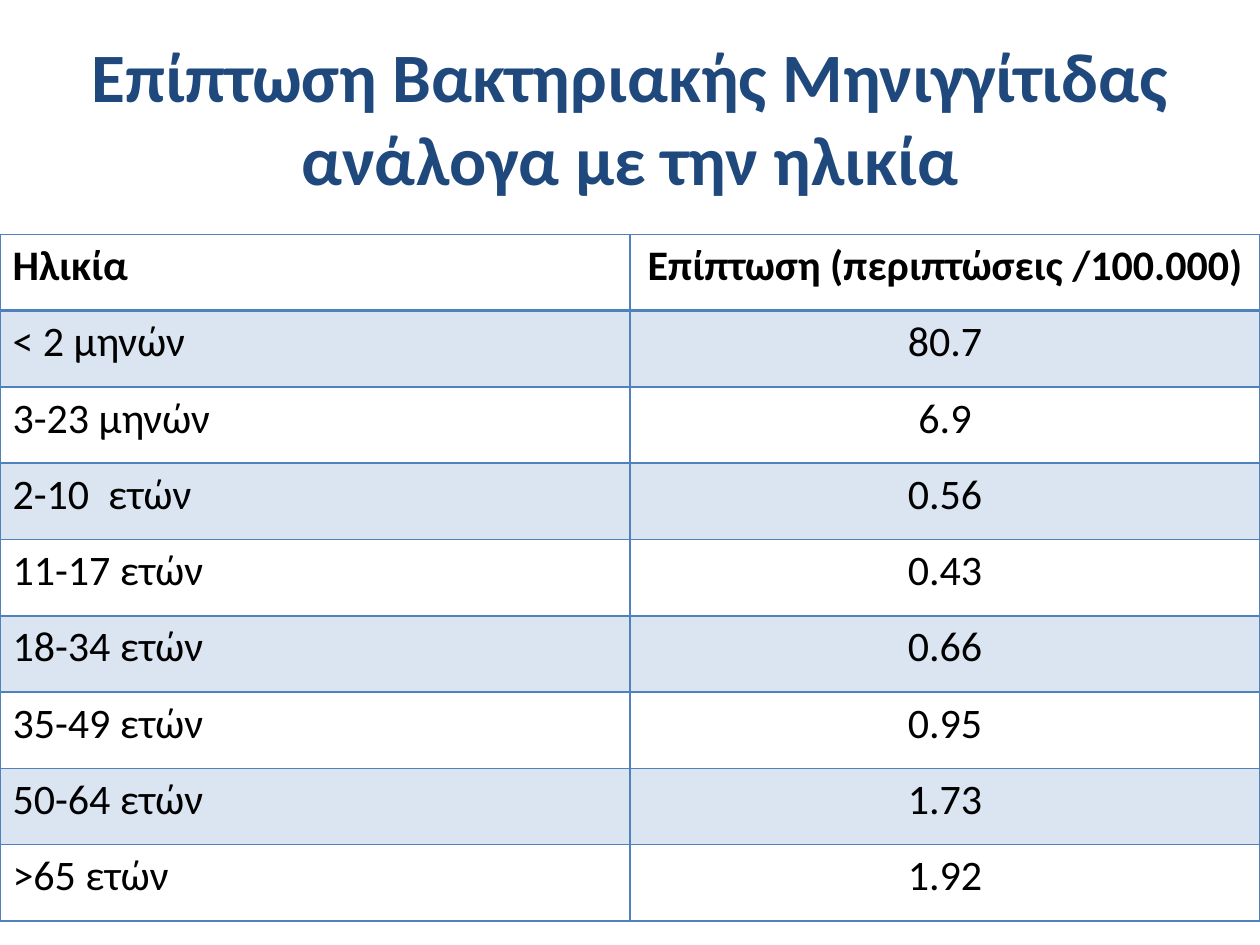
import pptx
import pptx.dml.color
import pptx.enum.text
import pptx.oxml
import pptx.oxml.ns
import pptx.util
from pptx.util import Inches

RGB = pptx.dml.color.RGBColor
NAVY = RGB(0x1F, 0x49, 0x7D)
BLUE = RGB(0x4F, 0x81, 0xBD)
BLACK = RGB(0, 0, 0)
ALIGN = pptx.enum.text.PP_ALIGN
ANCHOR = pptx.enum.text.MSO_ANCHOR
NS = pptx.oxml.ns.nsdecls("a")


def write(para, text, size, color, bold):
    run = para.add_run()
    run.text = text
    run.font.name = "Calibri"
    run.font.size = pptx.util.Pt(size)
    run.font.bold = bold
    run.font.color.rgb = color


def border(cell, side, width):
    cell._tc.get_or_add_tcPr().append(pptx.oxml.parse_xml(
        f'<a:ln{side} {NS} w="{pptx.util.Pt(width)}"><a:solidFill>'
        f'<a:srgbClr val="{BLUE}"/></a:solidFill></a:ln{side}>'))


deck = pptx.Presentation()
deck.slide_width = Inches(10)
deck.slide_height = Inches(7.5)
slide = deck.slides.add_slide(deck.slide_layouts[6])

title = slide.shapes.add_textbox(Inches(0), Inches(0.3), Inches(10), Inches(1.25))
frame = title.text_frame
frame.word_wrap = True
frame.vertical_anchor = ANCHOR.MIDDLE
para = frame.paragraphs[0]
para.alignment = ALIGN.CENTER
write(para, "Επίπτωση Βακτηριακής Μηνιγγίτιδας ανάλογα με την ηλικία", 39.6, NAVY, True)

rows = [
    ("Ηλικία", "Επίπτωση (περιπτώσεις /100.000)"),
    ("< 2 μηνών", "80.7"),
    ("3-23 μηνών", "6.9"),
    ("2-10  ετών", "0.56"),
    ("11-17 ετών", "0.43"),
    ("18-34 ετών", "0.66"),
    ("35-49 ετών", "0.95"),
    ("50-64 ετών", "1.73"),
    (">65 ετών", "1.92"),
]
table = slide.shapes.add_table(
    len(rows), 2, Inches(0), Inches(1.86), Inches(10), Inches(5.45)).table
for r, row in enumerate(rows):
    for c, text in enumerate(row):
        cell = table.cell(r, c)
        para = cell.text_frame.paragraphs[0]
        para.alignment = ALIGN.CENTER if c else ALIGN.LEFT
        write(para, text, 24, BLACK, r == 0)
        border(cell, "L", 1)
        border(cell, "R", 1)
        border(cell, "T", 2 if r == 1 else 1)
        border(cell, "B", 2 if r == 0 else 1)
        if r % 2:
            cell.fill.solid()
            cell.fill.fore_color.rgb = BLUE
            tint = cell._tc.tcPr.xpath("./a:solidFill/a:srgbClr")[0]
            tint.append(pptx.oxml.parse_xml(f'<a:alpha {NS} val="20000"/>'))
        else:
            cell.fill.background()

deck.save("out.pptx")
